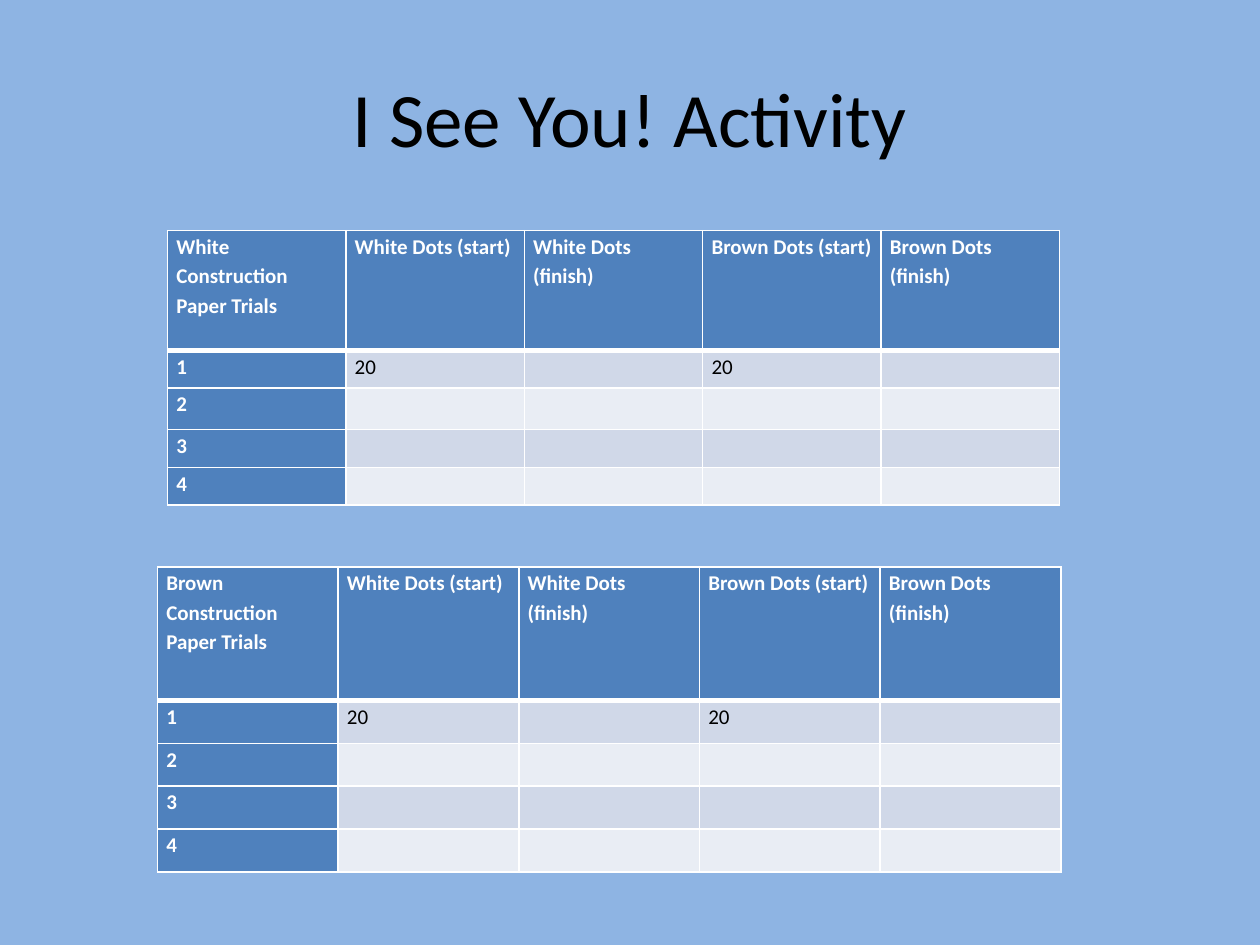
from dataclasses import dataclass

from lxml import etree
from pptx import Presentation
from pptx.dml.color import RGBColor
from pptx.enum.text import MSO_ANCHOR, PP_ALIGN
from pptx.oxml.ns import qn
from pptx.util import Inches, Pt

MIDDLE = MSO_ANCHOR.MIDDLE
CENTER = PP_ALIGN.CENTER


@dataclass(frozen=True)
class Theme:
    font: str = "Calibri"
    back: str = "8EB4E3"
    head: str = "4F81BD"
    bands: tuple = ("D0D8E8", "E9EDF4")
    light: str = "FFFFFF"
    dark: str = "000000"
    title: int = 44
    body: int = 12
    thin: int = 1
    thick: int = 3


def apply(item, values):
    for name, value in values.items():
        setattr(item, name, value)


class Deck:
    def __init__(self, theme):
        self.theme = theme
        self.prs = Presentation()
        apply(self.prs, {"slide_width": Inches(10), "slide_height": Inches(7.5)})
        self.slide = self.prs.slides.add_slide(self.prs.slide_layouts[6])
        self.paint(self.slide.background.fill, theme.back)

    def paint(self, fill, color):
        fill.solid()
        fill.fore_color.rgb = RGBColor.from_string(color)

    def label(self, para, text, size, color, bold=False):
        run = para.add_run()
        run.text = text
        apply(run.font, {"name": self.theme.font, "size": Pt(size), "bold": bold})
        run.font.color.rgb = RGBColor.from_string(color)

    def title(self, text, box):
        frame = self.slide.shapes.add_textbox(*map(Inches, box)).text_frame
        apply(frame, {"word_wrap": True, "vertical_anchor": MIDDLE})
        para = frame.paragraphs[0]
        para.alignment = CENTER
        self.label(para, text, self.theme.title, self.theme.dark)

    def border(self, cell, widths):
        props = cell._tc.get_or_add_tcPr()
        # Border lines must come before the fill
        for spot, (side, width) in enumerate(widths.items()):
            line = etree.Element(qn(f"a:ln{side}"), w=str(Pt(width)))
            fill = etree.SubElement(line, qn("a:solidFill"))
            etree.SubElement(fill, qn("a:srgbClr"), val=self.theme.light)
            props.insert(spot, line)

    def cell(self, cell, text, row, col):
        theme = self.theme
        head = row == 0 or col == 0
        apply(cell, {"margin_left": Inches(0.07), "margin_right": Inches(0.07),
                     "margin_top": 0, "margin_bottom": 0})
        self.paint(cell.fill, theme.head if head else theme.bands[(row - 1) % 2])
        self.border(cell, {"L": theme.thin, "R": theme.thin,
                           "T": theme.thick if row == 1 else theme.thin,
                           "B": theme.thick if row == 0 else theme.thin})
        para = cell.text_frame.paragraphs[0]
        para.line_spacing = 1.15
        if text:
            self.label(para, text, theme.body, theme.light if head else theme.dark, head)
        else:
            # Keep empty cells from stretching their rows
            etree.SubElement(para._p, qn("a:endParaRPr"), sz=str(theme.body * 100))

    def table(self, data, left, top, width, heights):
        count = len(data[0])
        frame = self.slide.shapes.add_table(
            len(data), count, Inches(left), Inches(top),
            Inches(width), Inches(sum(heights)))
        grid = frame.table
        for col in grid.columns:
            col.width = Inches(width / count)
        for row, height in zip(grid.rows, heights):
            row.height = Inches(height)
        for r, line in enumerate(data):
            for c, text in enumerate(line):
                self.cell(grid.cell(r, c), text, r, c)


def trials(paper):
    dots = [f"{color} Dots ({stage})" for color in ("White", "Brown")
            for stage in ("start", "finish")]
    head = [f"{paper} Construction Paper Trials", *dots]
    first = ["1", "20", "", "20", ""]
    return [head, first] + [[str(n), "", "", "", ""] for n in range(2, 5)]


def main():
    deck = Deck(Theme())

    # Heading
    deck.title("I See You! Activity", (0.5, 0.3, 9, 1.25))

    # One table of trials for each paper color
    deck.table(trials("White"), 1.33, 1.83, 7.08, [0.95, 0.3, 0.33, 0.3, 0.3])
    deck.table(trials("Brown"), 1.25, 4.5, 7.17, [1.06] + [0.34] * 4)

    deck.prs.save("out.pptx")


if __name__ == "__main__":
    main()
